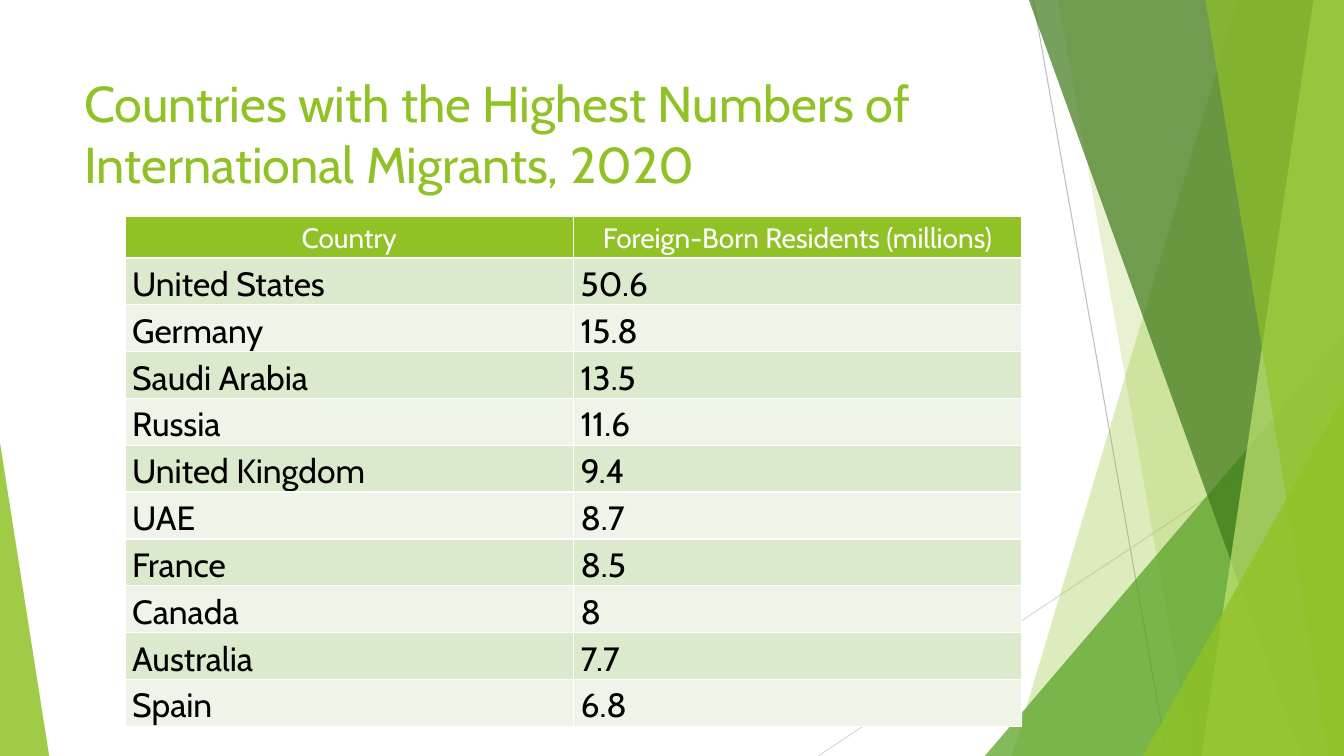
from dataclasses import dataclass

import pptx
import pptx.dml.color
import pptx.enum.shapes
import pptx.enum.text
import pptx.oxml
import pptx.oxml.ns
import pptx.util
from pptx.util import Cm

WIDE, HIGH = 33.87, 19.05
FONT = "Cabin"
HUES = {
    "white": "FFFFFF", "black": "000000", "lime": "90C226",
    "green": "54A021", "moss": "3F7819", "pale": "C0E474",
    "gray": "BFBFBF", "mist": "D9D9D9", "odd": "DBE9CD", "even": "EEF4E8",
}
ROWS = [
    ("United States", "50.6"),
    ("Germany", "15.8"),
    ("Saudi Arabia", "13.5"),
    ("Russia", "11.6"),
    ("United Kingdom", "9.4"),
    ("UAE", "8.7"),
    ("France", "8.5"),
    ("Canada", "8"),
    ("Australia", "7.7"),
    ("Spain", "6.8"),
]


@dataclass
class Rule:
    x1: float
    y1: float
    x2: float
    y2: float
    hue: str


@dataclass
class Band:
    """A pane from a slanted left edge to the right edge of the slide."""
    top: float
    base: float
    hue: str
    alpha: int


@dataclass
class Wedge:
    """A right triangle that stands on the bottom edge of the slide."""
    left: float
    wide: float
    high: float
    peak: float
    hue: str
    alpha: int


RULES = [
    Rule(26.04, 0, 29.41, HIGH, "gray"),
    Rule(WIDE, 10.24, 20.62, HIGH, "mist"),
]
PANES = [
    Band(31.19, 25.5, "lime", 30),
    Band(26.67, 30.05, "lime", 20),
    Wedge(24.82, 9.05, 10.59, 1, "green", 72),
    Band(25.93, 32.79, "moss", 70),
    Band(33.1, 30.28, "pale", 70),
    Band(30.38, 33.48, "lime", 65),
    Wedge(28.8, 5.07, 9.07, 1, "lime", 80),
    Wedge(0, 1.24, 7.9, 0, "lime", 85),
]


def tint(hue: str) -> pptx.dml.color.RGBColor:
    return pptx.dml.color.RGBColor.from_string(HUES[hue])


def draw_rule(slide, rule: Rule) -> None:
    line = slide.shapes.add_connector(
        pptx.enum.shapes.MSO_CONNECTOR.STRAIGHT,
        Cm(rule.x1), Cm(rule.y1), Cm(rule.x2), Cm(rule.y2))
    line.line.color.rgb = tint(rule.hue)
    line.line.width = pptx.util.Pt(0.75)
    pptx.oxml.ns.qn("a:effectLst")
    line._element.spPr.append(pptx.oxml.parse_xml(
        f'<a:effectLst {pptx.oxml.ns.nsdecls("a")}/>'))


def draw_pane(slide, pane: Band | Wedge) -> None:
    if isinstance(pane, Band):
        path = slide.shapes.build_freeform(Cm(pane.top), 0)
        path.add_line_segments([
            (Cm(WIDE), 0), (Cm(WIDE), Cm(HIGH)), (Cm(pane.base), Cm(HIGH))])
        shape = path.convert_to_shape()
    else:
        shape = slide.shapes.add_shape(
            pptx.enum.shapes.MSO_SHAPE.ISOSCELES_TRIANGLE, Cm(pane.left),
            Cm(HIGH - pane.high), Cm(pane.wide), Cm(pane.high))
        shape.adjustments[0] = pane.peak
    shape.shadow.inherit = False
    shape.line.fill.background()
    shape.fill.solid()
    shape.fill.fore_color.rgb = tint(pane.hue)
    color = shape._element.spPr.find(".//" + pptx.oxml.ns.qn("a:srgbClr"))
    color.append(pptx.oxml.parse_xml(
        f'<a:alpha {pptx.oxml.ns.nsdecls("a")} val="{pane.alpha * 1000}"/>'))


def add_run(para, text: str, size: int, hue: str) -> None:
    run = para.add_run()
    run.text = text
    run.font.name = FONT
    run.font.size = pptx.util.Pt(size)
    run.font.color.rgb = tint(hue)


def draw_title(slide, text: str) -> None:
    box = slide.shapes.add_textbox(Cm(1.88), Cm(1.7), Cm(23.88), Cm(3.66))
    box.text_frame.word_wrap = True
    add_run(box.text_frame.paragraphs[0], text, 36, "lime")


def fill_cell(cell, text: str, size: int, ink: str, back: str) -> None:
    cell.margin_left = cell.margin_right = Cm(0.18)
    cell.margin_top = cell.margin_bottom = 0
    props = cell._tc.get_or_add_tcPr()
    for side in "LRTB":
        props.append(pptx.oxml.parse_xml(
            f'<a:ln{side} {pptx.oxml.ns.nsdecls("a")} w="12700"><a:solidFill>'
            f'<a:srgbClr val="{HUES["white"]}"/></a:solidFill></a:ln{side}>'))
    cell.fill.solid()
    cell.fill.fore_color.rgb = tint(back)
    para = cell.text_frame.paragraphs[0]
    para.line_spacing = 1.15
    add_run(para, text, size, ink)


def draw_table(slide, heads: tuple[str, str],
               rows: list[tuple[str, str]]) -> None:
    head, body = 1.04, 1.18
    table = slide.shapes.add_table(
        len(rows) + 1, len(heads), Cm(3.15), Cm(5.46), Cm(22.6),
        Cm(head + body * len(rows))).table
    table.first_row = table.horz_banding = False
    for row in table.rows:
        row.height = Cm(body)
    table.rows[0].height = Cm(head)
    for col, text in enumerate(heads):
        cell = table.cell(0, col)
        fill_cell(cell, text, 20, "white", "lime")
        cell.text_frame.paragraphs[0].alignment = (
            pptx.enum.text.PP_ALIGN.CENTER)
    for num, row in enumerate(rows, 1):
        for col, text in enumerate(row):
            fill_cell(table.cell(num, col), text, 24, "black",
                      "odd" if num % 2 else "even")


def main() -> None:
    deck = pptx.Presentation()
    deck.slide_width, deck.slide_height = Cm(WIDE), Cm(HIGH)
    slide = deck.slides.add_slide(deck.slide_layouts[6])

    # Backdrop
    for rule in RULES:
        draw_rule(slide, rule)
    for pane in PANES:
        draw_pane(slide, pane)

    # Title and table
    draw_title(slide, "Countries with the Highest Numbers of "
                      "International Migrants, 2020")
    draw_table(slide, ("Country", "Foreign-Born Residents (millions)"), ROWS)

    deck.save("out.pptx")


if __name__ == "__main__":
    main()
